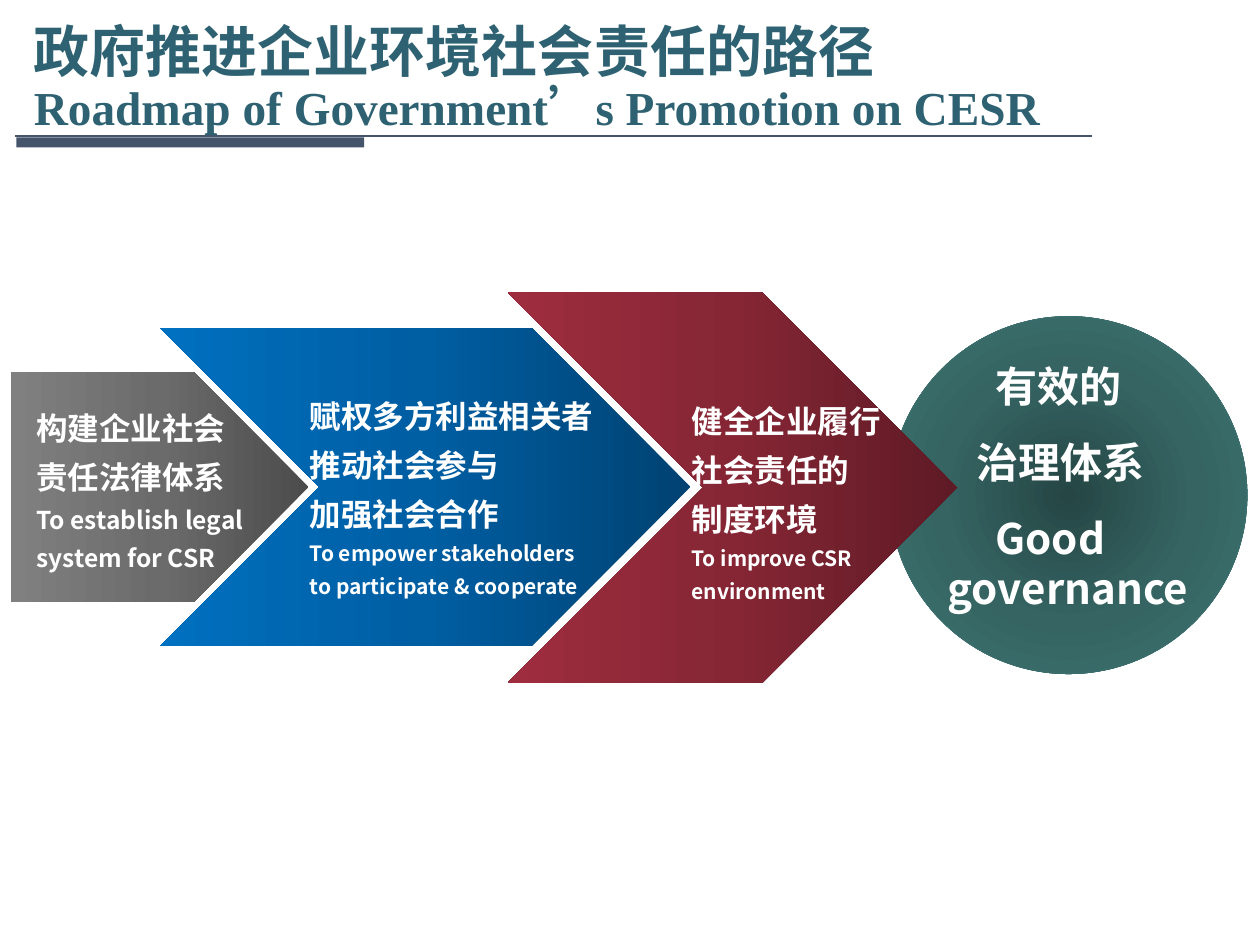
"""Build the slide on the roadmap for promoting corporate environmental responsibility."""
from lxml import etree
from pptx import Presentation
from pptx.dml.color import RGBColor
from pptx.enum import shapes, text
from pptx.oxml import ns
from pptx.util import Inches, Pt

TEAL = RGBColor(0x2E, 0x62, 0x72)
SLATE = RGBColor(0x44, 0x54, 0x6A)
WHITE = RGBColor(0xFF, 0xFF, 0xFF)
GREENS = [RGBColor(0x25, 0x46, 0x45), RGBColor(0x35, 0x64, 0x62), RGBColor(0x3E, 0x77, 0x74)]
BLUES = [RGBColor(0x00, 0x42, 0x72), RGBColor(0x00, 0x5E, 0xA2), RGBColor(0x00, 0x70, 0xC0)]
GRAYS = [RGBColor(0x4C, 0x4C, 0x4C), RGBColor(0x6B, 0x6B, 0x6B), RGBColor(0x80, 0x80, 0x80)]
REDS = [RGBColor(0x5E, 0x1A, 0x25), RGBColor(0x86, 0x26, 0x35), RGBColor(0x9E, 0x2D, 0x3F)]
SANS = "Noto Sans CJK SC"
SERIF = "Times New Roman"
CHINESE_SIZE = 18
RIGHT_TO_LEFT = '<a:lin ang="10800000" scaled="0"/>'
FROM_CENTER = ('<a:path path="circle">'
               '<a:fillToRect l="50000" t="50000" r="50000" b="50000"/></a:path>')
GRADIENT = ('<a:gradFill xmlns:a="http://schemas.openxmlformats.org/drawingml/2006/main">'
            '<a:gsLst>{stops}</a:gsLst>{direction}</a:gradFill>')
STOP = '<a:gs pos="{position}"><a:srgbClr val="{color}"/></a:gs>'


def add_text_frame(box, anchor=text.MSO_ANCHOR.TOP):
    tf = s.shapes.add_textbox(*map(Inches, box)).text_frame
    tf.word_wrap = True
    tf.vertical_anchor = anchor
    return tf


def style_run(r, size, color, latin_font):
    r.font.size = Pt(size)
    r.font.bold = True
    r.font.color.rgb = color
    r.font.name = latin_font
    east_asian = etree.SubElement(r.font._element, ns.qn("a:ea"))
    east_asian.set("typeface", SANS)


prs = Presentation()
prs.slide_width = Inches(10)
prs.slide_height = Inches(7.5)
s = prs.slides.add_slide(prs.slide_layouts[6])

rule = s.shapes.add_connector(
    shapes.MSO_CONNECTOR.STRAIGHT, Inches(0.12), Inches(1.08), Inches(8.67), Inches(1.08))
rule.line.color.rgb = SLATE
rule.line.width = Pt(1.5)
etree.SubElement(rule._element.spPr, ns.qn("a:effectLst"))

bar = s.shapes.add_shape(
    shapes.MSO_SHAPE.RECTANGLE, Inches(0.13), Inches(1.09), Inches(2.76), Inches(0.08))
bar.shadow.inherit = False
bar.fill.solid()
bar.fill.fore_color.rgb = SLATE
bar.line.fill.background()

title = add_text_frame((0.17, 0.09, 8.62, 1.08), text.MSO_ANCHOR.MIDDLE)
p = title.paragraphs[0]
p.text = "政府推进企业环境社会责任的路径\vRoadmap of Government’s Promotion on CESR"
p.line_spacing = 0.9
for r, size in zip(p.runs, (32, 27)):
    style_run(r, size, TEAL, SERIF)

stages = [
    (shapes.MSO_SHAPE.OVAL, (7.06, 2.51, 2.84, 2.84), GREENS, FROM_CENTER),
    (shapes.MSO_SHAPE.CHEVRON, (1.27, 2.6, 4.21, 2.53), BLUES, RIGHT_TO_LEFT),
    (shapes.MSO_SHAPE.PENTAGON, (0.09, 2.95, 2.36, 1.83), GRAYS, RIGHT_TO_LEFT),
    (shapes.MSO_SHAPE.CHEVRON, (4.03, 2.32, 3.57, 3.1), REDS, RIGHT_TO_LEFT),
]
for kind, box, colors, direction in stages:
    sp = s.shapes.add_shape(kind, *map(Inches, box))
    sp.shadow.inherit = False
    sp.line.fill.background()
    stops = "".join(
        STOP.format(position=position, color=color)
        for position, color in zip((0, 50000, 100000), colors))
    gradient = etree.fromstring(GRADIENT.format(stops=stops, direction=direction))
    sp._element.spPr.find(ns.qn("a:prstGeom")).addnext(gradient)

goal = add_text_frame((7.41, 2.75, 2.32, 2.23), text.MSO_ANCHOR.MIDDLE)
goal.margin_left = goal.margin_right = Inches(0.11)
goal.margin_top = goal.margin_bottom = Inches(0.11)
goal_lines = [
    ("有效的", 0.38, 1.0),
    ("治理体系", 0.23, 1.5),
    ("Good", 0.38, 1.5),
    ("governance", 0, 1.0),
]
goal.text = "\n".join(words for words, _, _ in goal_lines)
for p, (_, indent, spacing) in zip(goal.paragraphs, goal_lines):
    p.line_spacing = spacing
    p._p.get_or_add_pPr().set("marL", str(Inches(indent)))
    style_run(p.runs[0], 24, WHITE, SANS)

labels = [
    ((0.19, 3.11, 1.98, 1.5),
     ["构建企业社会", "责任法律体系"],
     ["To establish legal system for CSR"], 14),
    ((2.36, 3.01, 2.45, 1.81),
     ["赋权多方利益相关者", "推动社会参与", "加强社会合作"],
     ["To empower stakeholders", "to participate & cooperate"], 12),
    ((5.39, 3.05, 1.78, 1.81),
     ["健全企业履行社会责任的", "制度环境"],
     ["To improve CSR", "environment"], 12),
]
for box, chinese, english, english_size in labels:
    tf = add_text_frame(box)
    tf.text = "\n".join(chinese + english)
    sizes = [CHINESE_SIZE] * len(chinese) + [english_size] * len(english)
    for p, size in zip(tf.paragraphs, sizes):
        p.line_spacing = 1.3
        style_run(p.runs[0], size, WHITE, SANS)

prs.save("out.pptx")
